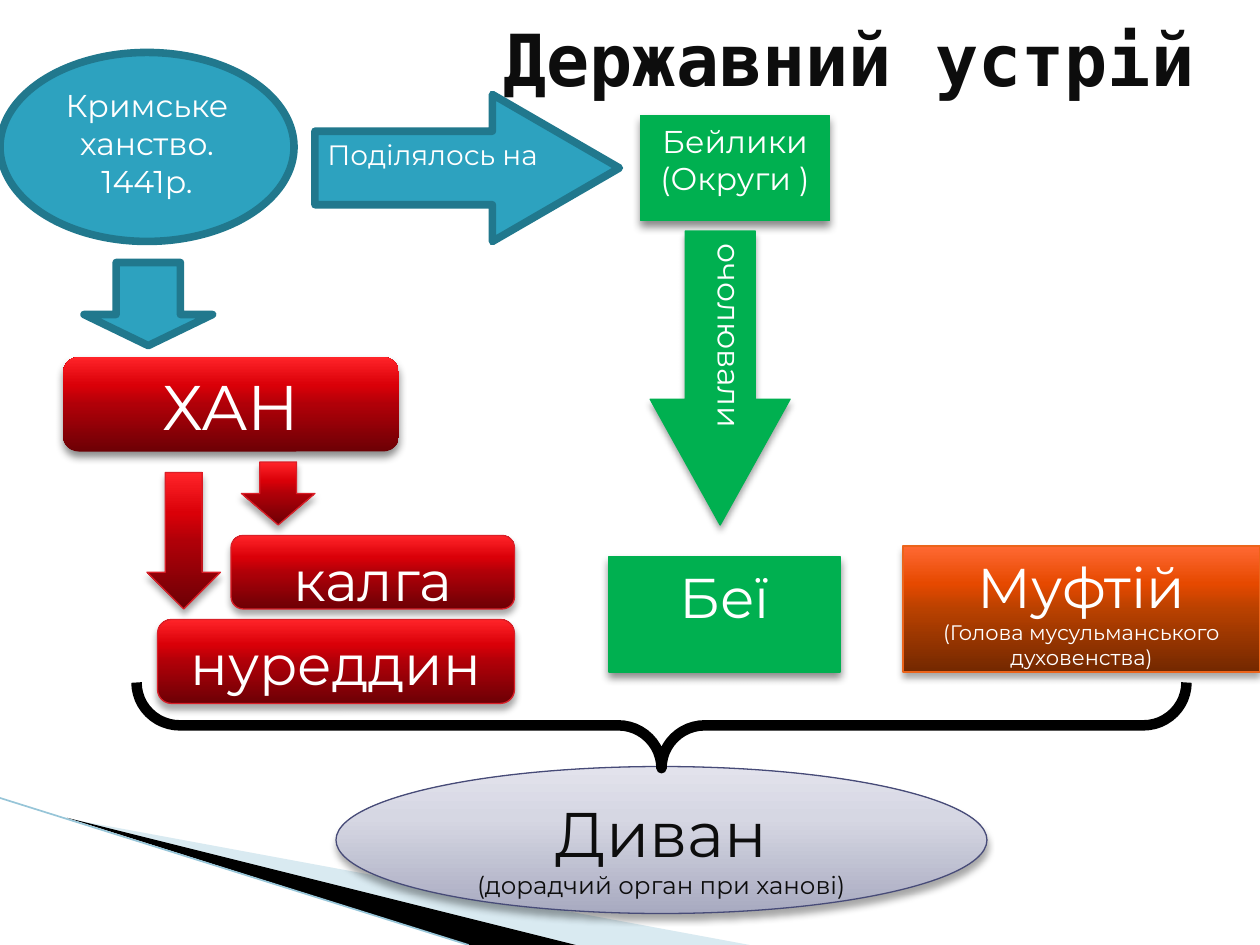
import pptx
import pptx.dml.color
import pptx.enum.shapes
import pptx.enum.text
import pptx.oxml.ns
import pptx.util
from lxml import etree

Pt = pptx.util.Pt
qn = pptx.oxml.ns.qn
SHAPE = pptx.enum.shapes.MSO_SHAPE
ALIGN = pptx.enum.text.PP_ALIGN
ANCHOR = pptx.enum.text.MSO_ANCHOR

BODY_FONT, TITLE_FONT = "Montserrat", "DejaVu Sans Mono"
WHITE, BLACK, INK = "FFFFFF", "000000", "0D0D0D"
TEAL, TEAL_EDGE, GREEN = "2DA2BF", "21788D", "00B050"
RED_EDGE, ORANGE_EDGE, LILAC_EDGE = "DA1F28", "EB641B", "474B78"
RED = [(0, "6D0005"), (50, "B00008"), (70, "DA0008"), (100, "FF2429")]
ORANGE = [(0, "732800"), (50, "B94100"), (70, "E64900"), (100, "FF6933")]
LILAC = [(0, "A8AAC0"), (65, "D6D7E3"), (100, "E2E2EC")]
SOFT_SHADOW, STRONG_SHADOW = (35, 4, 3), (45, 5, 3)  # opacity %, blur, distance


def rgb(value):
    return pptx.dml.color.RGBColor.from_string(value)


def add_colour(parent, value, opacity=100):
    colour = etree.SubElement(parent, qn("a:srgbClr"), val=value)
    if opacity < 100:
        etree.SubElement(colour, qn("a:alpha"), val=str(opacity * 1000))


def paint(shape, fill, edge=None, edge_width=0.75, shadow=None):
    """Fill with a hex colour, a list of gradient stops (bottom to top) or None."""
    if fill is None:
        shape.fill.background()
    elif isinstance(fill, str):
        shape.fill.solid()
        shape.fill.fore_color.rgb = rgb(fill)
    else:
        shape.fill.gradient()
        shape.fill.gradient_angle = 90
        stops = next(shape._element.spPr.iter(qn("a:gsLst")))
        for stop in list(stops):
            stops.remove(stop)
        for position, value in fill:
            add_colour(etree.SubElement(stops, qn("a:gs"), pos=str(position * 1000)), value)
    if edge:
        shape.line.color.rgb = rgb(edge)
        shape.line.width = Pt(edge_width)
    else:
        shape.line.fill.background()
    shape.shadow.inherit = False
    if shadow:
        opacity, blur, distance = shadow
        effects = shape._element.spPr.find(qn("a:effectLst"))
        outer = etree.SubElement(effects, qn("a:outerShdw"), blurRad=str(Pt(blur)),
                                 dist=str(Pt(distance)), dir="5400000", rotWithShape="0")
        add_colour(outer, BLACK, opacity)


def write(shape, lines, colour=WHITE, align=ALIGN.CENTER, after=10, font=BODY_FONT,
          anchor=ANCHOR.TOP, bold=False):
    frame = shape.text_frame
    frame.word_wrap = True
    frame.vertical_anchor = anchor
    for index, (words, size) in enumerate(lines):
        paragraph = frame.add_paragraph() if index else frame.paragraphs[0]
        paragraph.alignment = align
        paragraph.space_after = Pt(after)
        run = paragraph.add_run()
        run.text = words
        run.font.size = Pt(size)
        run.font.name = font
        run.font.bold = bold
        run.font.color.rgb = rgb(colour)


def add_figure(slide, kind, region, offset, size, adjustments=(), quarter_turn=False):
    """Place a shape by its visible box, given relative to the region's corner."""
    left, top = region[0] + offset[0], region[1] + offset[1]
    width, height = size
    if quarter_turn:
        left, top = left + (width - height) / 2, top + (height - width) / 2
        width, height = height, width
    shape = slide.shapes.add_shape(kind, Pt(left), Pt(top), Pt(width), Pt(height))
    for index, value in enumerate(adjustments):
        shape.adjustments[index] = value
    if quarter_turn:
        shape.rotation = 90
    return shape


def add_wedge(slide, box, corners, fill, opacity=100):
    points = [(Pt(box[0] + x), Pt(box[1] + y)) for x, y in corners]
    builder = slide.shapes.build_freeform(*points[0], scale=1.0)
    builder.add_line_segments(points[1:], close=True)
    wedge = builder.convert_to_shape()
    paint(wedge, fill)
    if opacity < 100:
        colour = next(wedge._element.spPr.iter(qn("a:srgbClr")))
        etree.SubElement(colour, qn("a:alpha"), val=str(opacity * 1000))


def add_corner_decoration(slide, box):
    left, top, _, height = box
    add_wedge(slide, box, [(39.6, 12), (428.4, height), (328.3, height)], "A0CBDC", 40)
    add_wedge(slide, box, [(38.2, 11.3), (329, height), (267.8, height)], BLACK)
    edge = slide.shapes.add_connector(pptx.enum.shapes.MSO_CONNECTOR.STRAIGHT, Pt(left), Pt(top),
                                      Pt(left + 267.8), Pt(top + height))
    edge.line.color.rgb = rgb("97C5D8")
    edge.line.width = Pt(0.95)
    etree.SubElement(edge._element.spPr, qn("a:effectLst"))


def add_title(slide, box):
    title = slide.shapes.add_textbox(*map(Pt, box))
    write(title, [("Державний устрій", 41)], INK, ALIGN.RIGHT, 0, TITLE_FONT,
          ANCHOR.MIDDLE, bold=True)


def add_khanate(slide, box):
    khanate = add_figure(slide, SHAPE.OVAL, box, (0, 0), (168, 108))
    divided_into = add_figure(slide, SHAPE.RIGHT_ARROW, box, (180, 24), (174, 84), (0.5, 0.864))
    to_khan = add_figure(slide, SHAPE.DOWN_ARROW, box, (48, 120), (73.5, 47.5), (0.5, 0.374))
    for part in (khanate, divided_into, to_khan):
        paint(part, TEAL, TEAL_EDGE, 4.33)
    write(khanate, [("Кримське ханство. 1441р.", 18)])
    write(divided_into, [("Поділялось на", 16)], align=ALIGN.LEFT)


def add_beyliks(slide, box):
    beyliks = add_figure(slide, SHAPE.RECTANGLE, box, (18, 0), (108, 60))
    headed_by = add_figure(slide, SHAPE.RIGHT_ARROW, box, (23.5, 66), (80, 168),
                           (0.5, 0.899), quarter_turn=True)
    beys = add_figure(slide, SHAPE.RECTANGLE, box, (0, 252), (132, 66))
    for part, shadow in ((beyliks, STRONG_SHADOW), (headed_by, SOFT_SHADOW),
                         (beys, STRONG_SHADOW)):
        paint(part, GREEN, GREEN, shadow=shadow)
    write(beyliks, [("Бейлики (Округи )", 18)])
    write(headed_by, [("очолювали", 18)], align=ALIGN.LEFT)
    write(beys, [("Беї", 32)])


def add_khan_and_deputies(slide, box):
    khan = add_figure(slide, SHAPE.ROUNDED_RECTANGLE, box, (0, 0), (192, 54))
    paint(khan, RED, shadow=STRONG_SHADOW)
    write(khan, [("ХАН", 36)])
    for name, offset, size in (("калга", (96, 102), (162, 42)),
                               ("нуреддин", (54, 150), (204, 48))):
        deputy = add_figure(slide, SHAPE.ROUNDED_RECTANGLE, box, offset, size)
        paint(deputy, RED, RED_EDGE, shadow=SOFT_SHADOW)
        write(deputy, [(name, 32)])
    for offset, height in (((48, 66), 78), ((102, 60), 36)):
        arrow = add_figure(slide, SHAPE.DOWN_ARROW, box, offset, (42, height))
        paint(arrow, RED, RED_EDGE, shadow=SOFT_SHADOW)


def add_mufti(slide, box):
    mufti = add_figure(slide, SHAPE.RECTANGLE, box, (0, 0), box[2:])
    paint(mufti, ORANGE, ORANGE_EDGE, shadow=SOFT_SHADOW)
    write(mufti, [("Муфтій", 32), ("(Голова мусульманського духовенства)", 12)], after=0)


def add_divan(slide, box):
    divan = add_figure(slide, SHAPE.OVAL, box, (114, 48), (372, 84))
    paint(divan, LILAC, LILAC_EDGE, shadow=SOFT_SHADOW)
    write(divan, [("Диван", 36), ("(дорадчий орган при ханові)", 14)], INK, after=0)
    brace = add_figure(slide, SHAPE.RIGHT_BRACE, box, (0, 0), (box[2], 49),
                       (0.504, 0.5), quarter_turn=True)
    paint(brace, None, BLACK, 6)


def main():
    deck = pptx.Presentation()
    deck.slide_width, deck.slide_height = Pt(720), Pt(540)
    slide = deck.slides.add_slide(deck.slide_layouts[6])
    add_corner_decoration(slide, (0, 456, 429, 84))
    add_title(slide, (42, 0, 648, 66))
    add_khanate(slide, (0, 30, 354, 168))
    add_beyliks(slide, (348, 66, 132, 318))
    add_khan_and_deputies(slide, (36, 204, 258, 198))
    add_mufti(slide, (516, 312, 204, 72))
    add_divan(slide, (78, 390, 600, 132))
    deck.save("out.pptx")


if __name__ == "__main__":
    main()
